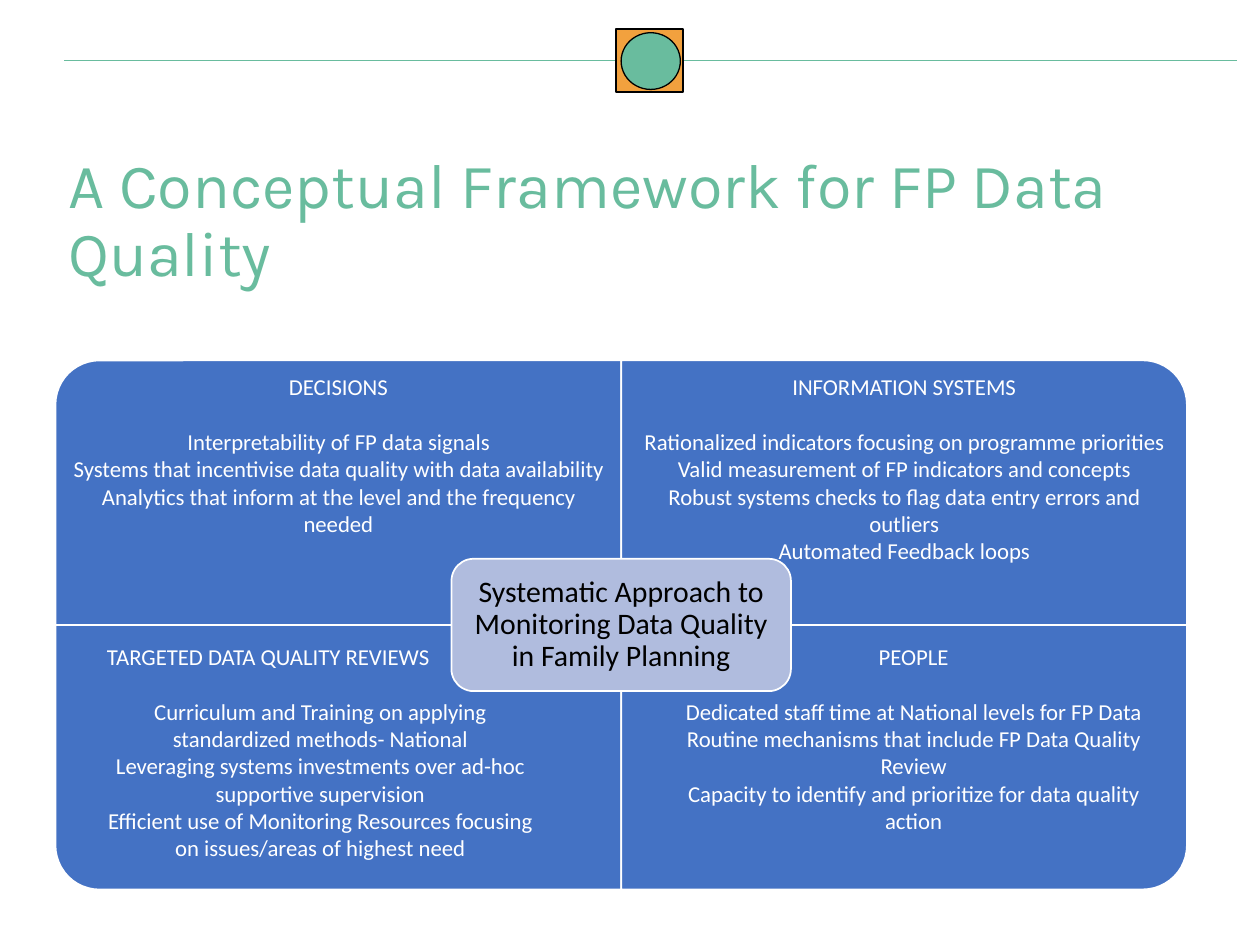
from pptx import Presentation
from pptx.dml.color import RGBColor
from pptx.enum.shapes import MSO_CONNECTOR, MSO_SHAPE
from pptx.enum.text import MSO_ANCHOR, PP_ALIGN
from pptx.oxml.ns import qn
from pptx.util import Inches, Pt
from lxml.etree import SubElement

# Content
TITLE = "A Conceptual Framework for FP Data Quality"
CENTRE = "Systematic Approach to Monitoring Data Quality in Family Planning"
# row, column, rotation, text box, inset, heading alignment, heading, points
QUADRANTS = [
    (0, 0, 270, (0.44, 2.86, 4.49, 1.57), 0.1, PP_ALIGN.CENTER, "DECISIONS", [
        "Interpretability of FP data signals",
        "Systems that incentivise data quality with data availability",
        "Analytics that inform at the level and the frequency needed"]),
    (0, 1, 0, (4.93, 2.86, 4.49, 1.57), 0.1, PP_ALIGN.CENTER, "INFORMATION SYSTEMS", [
        "Rationalized indicators focusing on programme priorities "
        "Valid measurement of FP indicators and concepts",
        "Robust systems checks to flag data entry errors and outliers",
        "Automated Feedback loops"]),
    (1, 0, 180, (0.75, 5.05, 3.58, 1.85), 0.05, PP_ALIGN.LEFT,
     "TARGETED DATA QUALITY REVIEWS", [
        "Curriculum and Training on applying standardized methods- National",
        "Leveraging systems investments over ad-hoc supportive supervision",
        "Efficient use of Monitoring Resources focusing on issues/areas of highest need"]),
    (1, 1, 90, (5.21, 5.05, 4.08, 1.94), 0.05, PP_ALIGN.CENTER, "PEOPLE", [
        "Dedicated staff time at National levels for FP Data",
        "Routine mechanisms that include FP Data Quality Review",
        "Capacity to identify and prioritize for data quality action"]),
]

# Grid and colours
LEFT, TOP, CELL_WIDTH, CELL_HEIGHT = 0.44, 2.86, 4.49, 2.1
GREEN, ORANGE, BLUE, LILAC = "69BC9E", "F2A13E", "4472C4", "B0BCDE"
WHITE, BLACK = "FFFFFF", "000000"


def color(value):
    return RGBColor.from_string(value)


def box(left, top, width, height):
    return [Inches(value) for value in (left, top, width, height)]


def add_block(kind, place, fill, line, weight=1):
    shape = slide.shapes.add_shape(kind, *box(*place))
    shape.shadow.inherit = False
    shape.fill.solid()
    shape.fill.fore_color.rgb = color(fill)
    shape.line.color.rgb = color(line)
    shape.line.width = Pt(weight)
    return shape


def style(paragraph, name, size, value, align):
    paragraph.alignment = align
    for run in paragraph.runs:
        run.font.name = name
        run.font.size = Pt(size)
        run.font.color.rgb = color(value)


presentation = Presentation()
presentation.slide_width, presentation.slide_height = Inches(10), Inches(7.5)
slide = presentation.slides.add_slide(presentation.slide_layouts[5])

# Header rule and emblem
rule = slide.shapes.add_connector(
    MSO_CONNECTOR.STRAIGHT, *box(0.51, 0.48, 9.82, 0.48))
rule.line.color.rgb = color(GREEN)
rule.line.width = Pt(0.75)
SubElement(rule._element.spPr, qn("a:effectLst"))
add_block(MSO_SHAPE.RECTANGLE, (4.89, 0.23, 0.53, 0.5), ORANGE, BLACK)
add_block(MSO_SHAPE.OVAL, (4.93, 0.26, 0.47, 0.45), GREEN, BLACK, 0.75)

# Title
title = slide.shapes.title
title.left, title.top, title.width, title.height = box(0.44, 1.17, 9.07, 0.92)
title.text_frame.text = TITLE
title.text_frame.word_wrap = True
title.text_frame.vertical_anchor = MSO_ANCHOR.TOP
heading = title.text_frame.paragraphs[0]
heading.line_spacing = 0.9
style(heading, "Karla", 36, GREEN, PP_ALIGN.LEFT)

# Quadrants: each one is turned so that its round corner points outwards
for row, column, rotation, *_ in QUADRANTS:
    sideways = rotation % 180 == 90
    width, height = (CELL_HEIGHT, CELL_WIDTH) if sideways else (CELL_WIDTH, CELL_HEIGHT)
    middle_x = LEFT + (column + 0.5) * CELL_WIDTH
    middle_y = TOP + (row + 0.5) * CELL_HEIGHT
    quadrant = add_block(
        MSO_SHAPE.ROUND_1_RECTANGLE,
        (middle_x - width / 2, middle_y - height / 2, width, height), BLUE, WHITE)
    quadrant.rotation = rotation

# Quadrant texts
for _, _, _, place, inset, heading_align, heading_text, points in QUADRANTS:
    frame = slide.shapes.add_textbox(*box(*place)).text_frame
    frame.word_wrap = True
    frame.margin_top = frame.margin_bottom = Inches(inset)
    frame.text = "\n".join([heading_text, *points])
    for paragraph in frame.paragraphs:
        style(paragraph, "Calibri", 13, WHITE, PP_ALIGN.CENTER)
    frame.paragraphs[0].alignment = heading_align
    frame.paragraphs[0].space_after = Pt(15.8)

# Centre label, over the crossing of the grid
label_width, label_height = 0.6 * CELL_WIDTH, 0.5 * CELL_HEIGHT
label = add_block(
    MSO_SHAPE.ROUNDED_RECTANGLE,
    (LEFT + CELL_WIDTH - label_width / 2, TOP + CELL_HEIGHT - label_height / 2,
     label_width, label_height), LILAC, WHITE)
frame = label.text_frame
frame.text = CENTRE
frame.word_wrap = True
frame.vertical_anchor = MSO_ANCHOR.MIDDLE
frame.margin_left = frame.margin_right = Inches(0.07)
frame.margin_top = frame.margin_bottom = Inches(0.07)
frame.paragraphs[0].line_spacing = 0.9
style(frame.paragraphs[0], "Calibri", 17, BLACK, PP_ALIGN.CENTER)

presentation.save("out.pptx")
